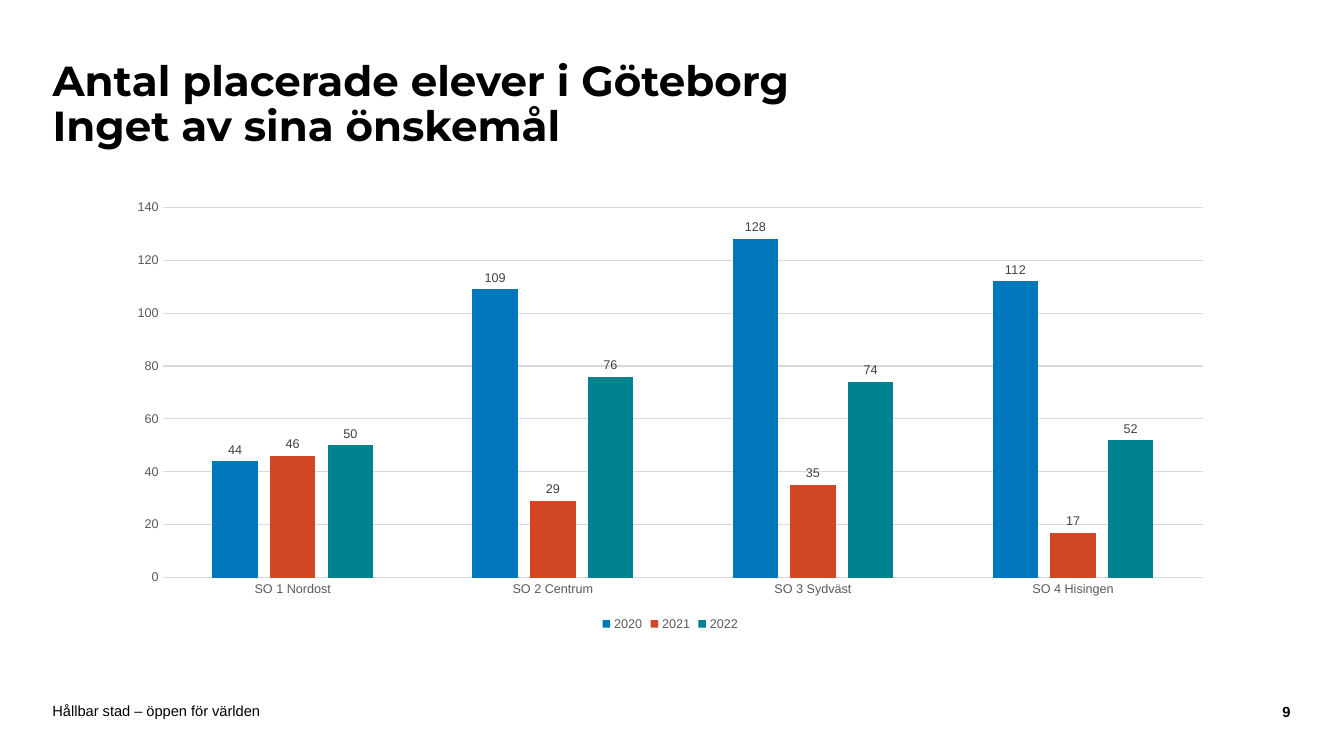
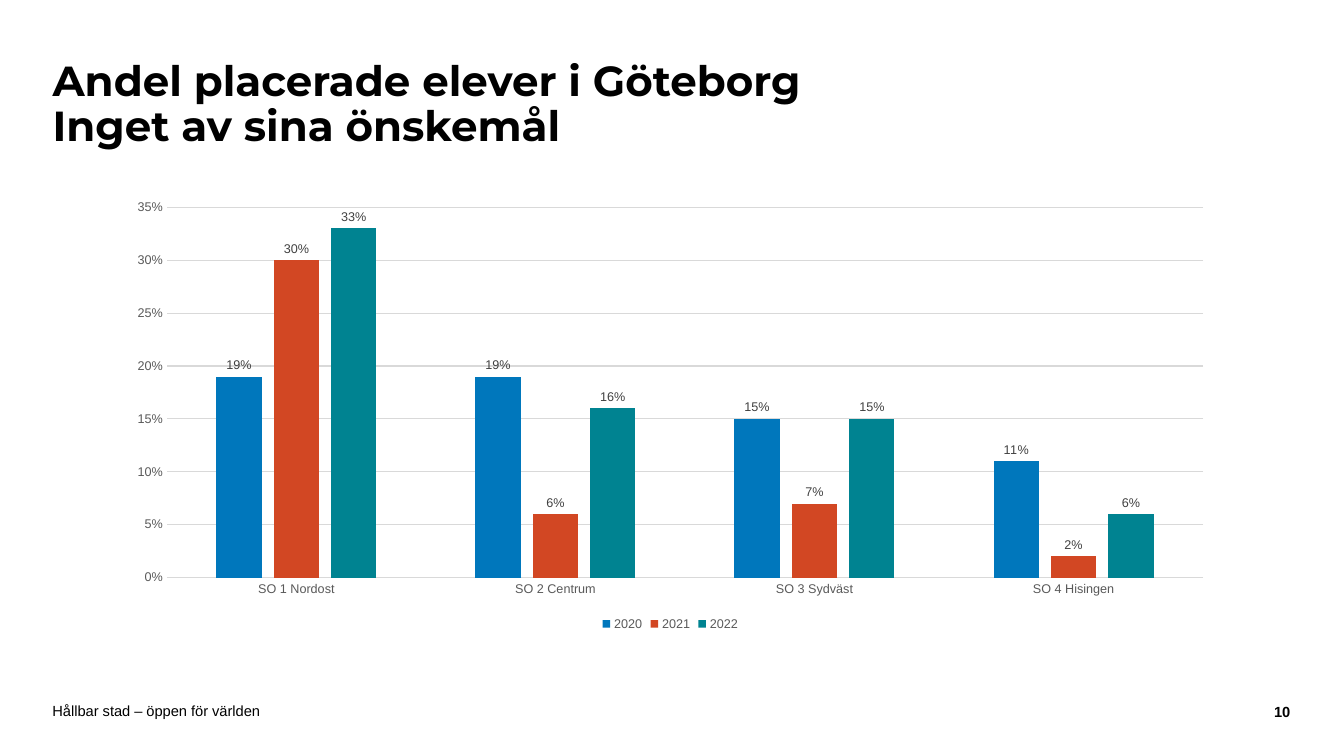
from pptx import Presentation
from pptx.chart.data import CategoryChartData
from pptx.dml.color import RGBColor
from pptx.enum.chart import XL_CHART_TYPE, XL_LABEL_POSITION, XL_LEGEND_POSITION, XL_TICK_MARK
from pptx.enum.text import MSO_ANCHOR, MSO_AUTO_SIZE, PP_ALIGN
from pptx.util import Emu, Pt

COLUMNS = XL_CHART_TYPE.COLUMN_CLUSTERED
OUTSIDE_END = XL_LABEL_POSITION.OUTSIDE_END
LEGEND_BOTTOM = XL_LEGEND_POSITION.BOTTOM
NO_TICKS = XL_TICK_MARK.NONE
MIDDLE = MSO_ANCHOR.MIDDLE
NO_FIT = MSO_AUTO_SIZE.NONE
LEFT, RIGHT = PP_ALIGN.LEFT, PP_ALIGN.RIGHT

# Shared look: 96 px to the inch
PX = 9525
BLACK, AXIS_GREY, LABEL_GREY, GRID_GREY = "000000", "595959", "404040", "D9D9D9"
SERIES_COLOURS = {"2020": "0077BC", "2021": "D24723", "2022": "008391"}
AREAS = ["SO 1 Nordost", "SO 2 Centrum", "SO 3 Sydväst", "SO 4 Hisingen"]
FOOTER = "Hållbar stad – öppen för världen"
TITLE_BOX = (50, 40, 963, 121)
CHART_BOX = (110, 182, 1057, 423)
FOOTER_BOX = (50, 669, 907, 15)
NUMBER_BOX = (1168, 670, 61, 15)

# Page number, title, number format, axis top, axis step, values by year
PAGES = [
    (9, "Antal placerade elever i Göteborg\vInget av sina önskemål", "General", 140, 20,
     [(44, 109, 128, 112), (46, 29, 35, 17), (50, 76, 74, 52)]),
    (10, "Andel placerade elever i Göteborg\vInget av sina önskemål", "0%", 0.35, 0.05,
     [(0.19, 0.19, 0.15, 0.11), (0.3, 0.06, 0.07, 0.02), (0.33, 0.16, 0.15, 0.06)]),
]


def style_font(font, name, size, colour, bold=False):
    font.name, font.size, font.bold = name, Pt(size), bold
    font.color.rgb = RGBColor.from_string(colour)


def fill_text(box, text, font_name, size, bold, align, inset=0):
    frame = box.text_frame
    frame.text = text
    frame.word_wrap = True
    frame.auto_size = NO_FIT
    frame.vertical_anchor = MIDDLE
    frame.margin_left = frame.margin_right = 0
    frame.margin_top = frame.margin_bottom = inset * PX
    para = frame.paragraphs[0]
    para.alignment = align
    style_font(para.font, font_name, size, BLACK, bold)
    return para


deck = Presentation()
deck.slide_width, deck.slide_height = Emu(1280 * PX), Emu(720 * PX)
title_only = deck.slide_layouts[5]

for number, heading, number_format, axis_top, axis_step, rows in PAGES:
    page = deck.slides.add_slide(title_only)

    # Title
    title = page.shapes.title
    title.left, title.top, title.width, title.height = [Emu(n * PX) for n in TITLE_BOX]
    para = fill_text(title, heading, "Montserrat", 30, True, LEFT, inset=5)
    para.line_spacing = 0.9

    # Footer and page number
    for place, text, bold, align in [(FOOTER_BOX, FOOTER, False, LEFT),
                                     (NUMBER_BOX, str(number), True, RIGHT)]:
        box = page.shapes.add_textbox(*[Emu(n * PX) for n in place])
        fill_text(box, text, "Arial", 10.5, bold, align)

    # Chart data
    data = CategoryChartData(number_format=number_format)
    data.categories = AREAS
    for year, values in zip(SERIES_COLOURS, rows):
        data.add_series(year, values)
    frame = page.shapes.add_chart(COLUMNS, *[Emu(n * PX) for n in CHART_BOX], data)
    chart = frame.chart
    chart.has_title = False
    style_font(chart.font, "Arial", 10, BLACK)

    # Legend
    chart.has_legend = True
    chart.legend.position = LEGEND_BOTTOM
    chart.legend.include_in_layout = False
    style_font(chart.legend.font, "Arial", 9, AXIS_GREY)

    # Axes
    areas, scale = chart.category_axis, chart.value_axis
    for axis in (areas, scale):
        axis.major_tick_mark = axis.minor_tick_mark = NO_TICKS
        style_font(axis.tick_labels.font, "Arial", 9, AXIS_GREY)
    scale.minimum_scale, scale.maximum_scale, scale.major_unit = 0, axis_top, axis_step
    scale.tick_labels.number_format = number_format
    scale.tick_labels.number_format_is_linked = False
    scale.has_major_gridlines = True
    scale.format.line.fill.background()
    for line in (areas.format.line, scale.major_gridlines.format.line):
        line.color.rgb = RGBColor.from_string(GRID_GREY)
        line.width = Pt(0.75)

    # Columns and their labels
    plot = chart.plots[0]
    plot.gap_width, plot.overlap = 219, -27
    plot.vary_by_categories = False
    for series, colour in zip(plot.series, SERIES_COLOURS.values()):
        series.format.fill.solid()
        series.format.fill.fore_color.rgb = RGBColor.from_string(colour)
        series.invert_if_negative = False
        labels = series.data_labels
        labels.show_value = True
        labels.position = OUTSIDE_END
        labels.number_format = number_format
        labels.number_format_is_linked = False
        style_font(labels.font, "Arial", 9, LABEL_GREY)

deck.save("out.pptx")
